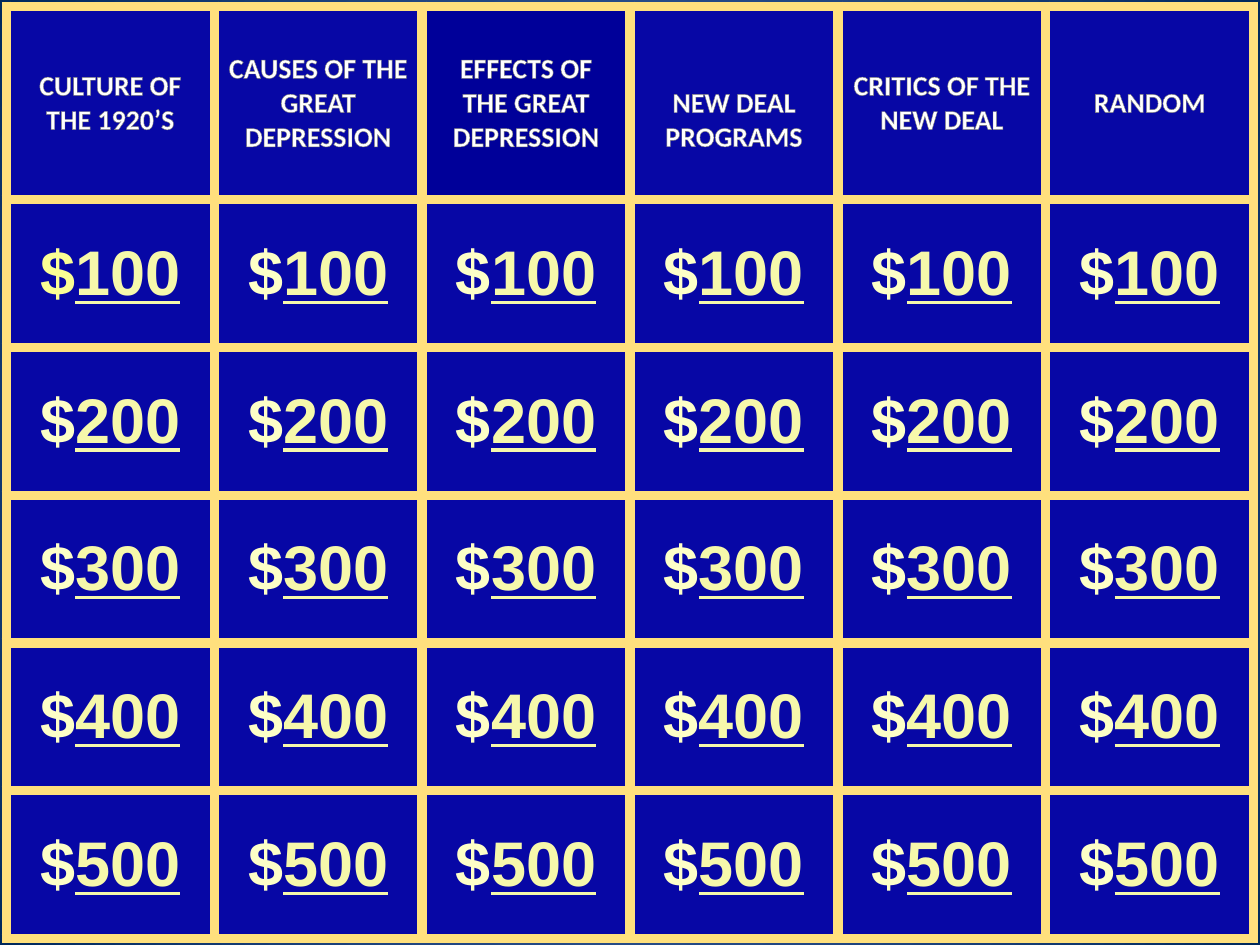
"""Build a quiz board slide with six categories and five prize rows."""
import dataclasses
import typing

import lxml.etree
import pptx
import pptx.dml.color
import pptx.enum.text
import pptx.oxml
import pptx.oxml.ns
import pptx.table
import pptx.util

Stops = tuple[tuple[int, str], ...]


@dataclasses.dataclass(frozen=True)
class Theme:
    cell: str = "0707A5"
    cell_dark: str = "000099"
    border: str = "FFE07D"
    border_width: float = 6
    heading: str = "FFFFFF"
    outline: str = "7D7D7D"
    outline_width: float = 0.83
    amount: str = "F6F8AB"
    dollar: Stops = ((0, "FCFFA4"), (50, "FDFFC7"), (100, "FEFFE4"))
    first_dollar: Stops = ((0, "FBFE94"), (0, "FBFE94"), (50, "FDFFC7"), (100, "FEFFE4"))
    backdrop: Stops = ((0, "5E7CC5"), (100, "00295C"))
    heading_font: str = "Calibri"
    amount_font: str = "Arial"
    heading_size: float = 16
    amount_size: float = 36


@dataclasses.dataclass(frozen=True)
class Category:
    title: str
    fill: str
    drop: float = 0


THEME = Theme()
CATEGORIES = (
    Category("CULTURE OF THE 1920’S", THEME.cell),
    Category("CAUSES OF THE GREAT DEPRESSION", THEME.cell),
    Category("EFFECTS OF THE GREAT DEPRESSION", THEME.cell_dark),
    Category("NEW DEAL PROGRAMS", THEME.cell, drop=19.5),
    Category("CRITICS OF THE NEW DEAL", THEME.cell),
    Category("RANDOM", THEME.cell),
)
AMOUNTS = (100, 200, 300, 400, 500)
SLIDE_WIDTH, SLIDE_HEIGHT = 720, 540
MARGIN = 3.6
HEADING_HEIGHT = 110.5
CELL_MARGIN = 3.6
NAMESPACE = pptx.oxml.ns.nsdecls("a")
RADIAL = '<a:path path="circle"><a:fillToRect l="50000" t="50000" r="50000" b="50000"/></a:path>'
DOWNWARD = '<a:lin ang="5400000" scaled="0"/>'


def gradient(stops: Stops, direction: str) -> lxml.etree._Element:
    marks = "".join(
        f'<a:gs pos="{place * 1000}"><a:srgbClr val="{color}"/></a:gs>' for place, color in stops
    )
    return pptx.oxml.parse_xml(
        f'<a:gradFill {NAMESPACE} rotWithShape="1"><a:gsLst>{marks}</a:gsLst>{direction}</a:gradFill>'
    )


def line(tag: str, color: str, width: float) -> lxml.etree._Element:
    return pptx.oxml.parse_xml(
        f'<a:{tag} {NAMESPACE} w="{pptx.util.Pt(width)}">'
        f'<a:solidFill><a:srgbClr val="{color}"/></a:solidFill></a:{tag}>'
    )


def add_text(
    cell: pptx.table._Cell,
    text: str,
    *,
    font: str,
    size: float,
    color: typing.Optional[str] = None,
    stops: Stops = (),
    outlined: bool = False,
    underline: bool = False,
) -> None:
    para = cell.text_frame.paragraphs[0]
    para.alignment = pptx.enum.text.PP_ALIGN.CENTER
    span = para.add_run()
    span.text = text
    span.font.name = font
    span.font.size = pptx.util.Pt(size)
    span.font.bold = True
    span.font.underline = underline
    properties = span._r.get_or_add_rPr()
    if color:
        span.font.color.rgb = pptx.dml.color.RGBColor.from_string(color)
    if stops:
        properties.insert(0, gradient(stops, DOWNWARD))
    if outlined:
        properties.insert(0, line("ln", THEME.outline, THEME.outline_width))


def style_cell(cell: pptx.table._Cell, fill: str, drop: float = 0) -> None:
    cell.vertical_anchor = pptx.enum.text.MSO_ANCHOR.MIDDLE
    cell.margin_top = pptx.util.Pt(CELL_MARGIN + drop)
    cell.fill.solid()
    cell.fill.fore_color.rgb = pptx.dml.color.RGBColor.from_string(fill)
    properties = cell._tc.get_or_add_tcPr()
    for index, tag in enumerate(("lnL", "lnR", "lnT", "lnB")):
        properties.insert(index, line(tag, THEME.border, THEME.border_width))


def draw_heading(cell: pptx.table._Cell, category: Category) -> None:
    style_cell(cell, category.fill, category.drop)
    add_text(cell, category.title, font=THEME.heading_font, size=THEME.heading_size,
             color=THEME.heading, outlined=True)


def draw_amount(cell: pptx.table._Cell, amount: int, stops: Stops) -> None:
    style_cell(cell, THEME.cell)
    add_text(cell, "$", font=THEME.amount_font, size=THEME.amount_size, stops=stops)
    add_text(cell, str(amount), font=THEME.amount_font, size=THEME.amount_size,
             color=THEME.amount, underline=True)


def main() -> None:
    deck = pptx.Presentation()
    deck.slide_width = pptx.util.Pt(SLIDE_WIDTH)
    deck.slide_height = pptx.util.Pt(SLIDE_HEIGHT)
    page = deck.slides.add_slide(deck.slide_layouts[6])
    page.background.fill.solid()
    backdrop = page._element.cSld.bg.bgPr
    backdrop.replace(backdrop[0], gradient(THEME.backdrop, RADIAL))

    width, height = SLIDE_WIDTH - 2 * MARGIN, SLIDE_HEIGHT - 2 * MARGIN
    board = page.shapes.add_table(
        len(AMOUNTS) + 1, len(CATEGORIES), pptx.util.Pt(MARGIN), pptx.util.Pt(MARGIN),
        pptx.util.Pt(width), pptx.util.Pt(height),
    ).table
    board.first_row = False
    board.horz_banding = False
    for column in board.columns:
        column.width = pptx.util.Pt(width / len(CATEGORIES))
    for row in board.rows:
        row.height = pptx.util.Pt((height - HEADING_HEIGHT) / len(AMOUNTS))
    board.rows[0].height = pptx.util.Pt(HEADING_HEIGHT)

    for column_index, category in enumerate(CATEGORIES):
        draw_heading(board.cell(0, column_index), category)
        for row_index, amount in enumerate(AMOUNTS, start=1):
            is_first = (row_index, column_index) == (1, 0)
            stops = THEME.first_dollar if is_first else THEME.dollar
            draw_amount(board.cell(row_index, column_index), amount, stops)

    deck.save("out.pptx")


if __name__ == "__main__":
    main()
